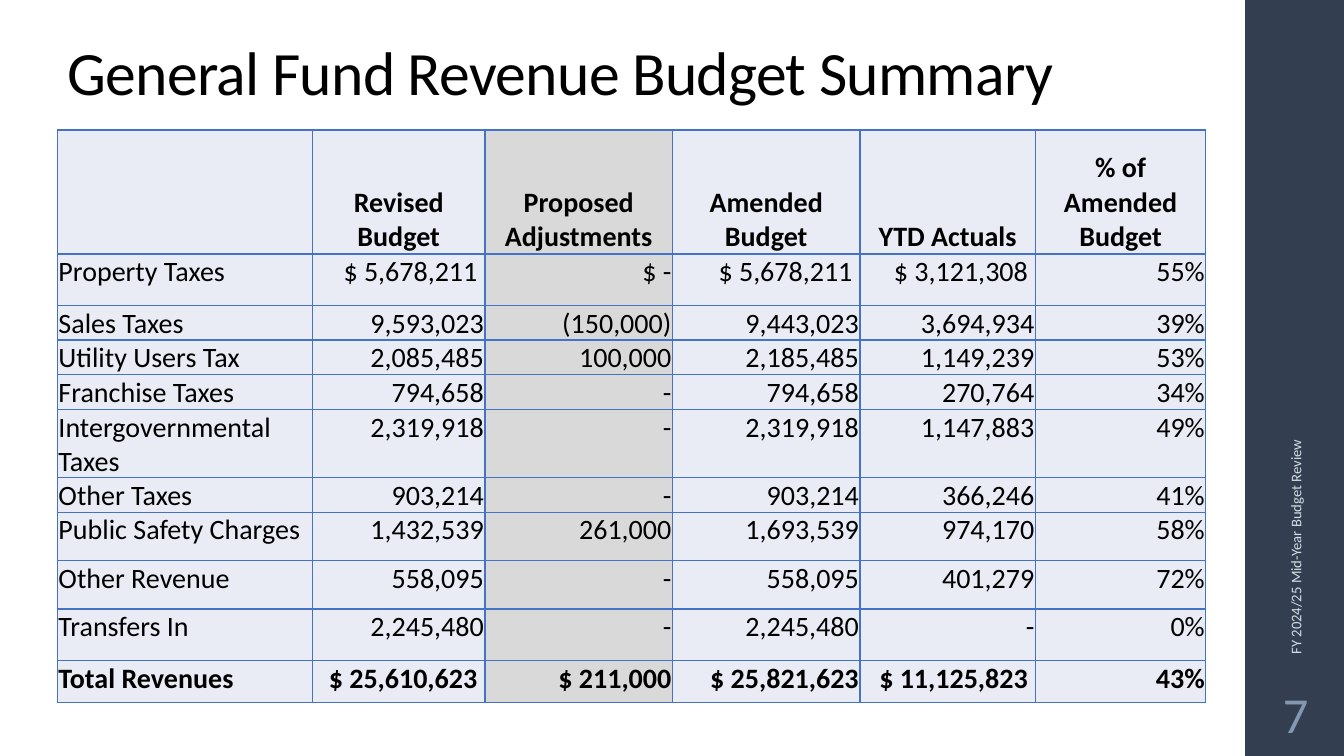
from lxml.etree import SubElement
from pptx import Presentation
from pptx.dml.color import RGBColor
from pptx.enum.shapes import MSO_SHAPE
from pptx.enum.text import MSO_ANCHOR, PP_ALIGN
from pptx.oxml import parse_xml
from pptx.oxml.ns import nsdecls, qn
from pptx.util import Inches, Pt

BLACK = RGBColor(0x00, 0x00, 0x00)
NAVY = RGBColor(0x33, 0x3F, 0x50)
PALE_GREY = RGBColor(0xD6, 0xDC, 0xE5)
SLATE = RGBColor(0x84, 0x97, 0xB0)
CELL_BLUE = RGBColor(0xE9, 0xEB, 0xF5)
CELL_GREY = RGBColor(0xD9, 0xD9, 0xD9)
BORDER_BLUE = RGBColor(0x44, 0x72, 0xC4)

COLUMN_WIDTHS = [2.53, 1.71, 1.86, 1.86, 1.74, 1.69]
ROW_HEIGHTS = [1.23, 0.51, 0.26, 0.26, 0.32, 0.51, 0.32, 0.48, 0.48, 0.51, 0.42]
ADJUSTMENTS_COLUMN = 2
REVENUES = [
    ["", "Revised Budget", "Proposed Adjustments", "Amended Budget",
     "YTD Actuals", "% of Amended Budget"],
    ["Property Taxes", "$ 5,678,211 ", "$ -", "$ 5,678,211 ", "$ 3,121,308 ", "55%"],
    ["Sales Taxes", "9,593,023", "(150,000)", "9,443,023", "3,694,934", "39%"],
    ["Utility Users Tax", "2,085,485", "100,000", "2,185,485", "1,149,239", "53%"],
    ["Franchise Taxes", "794,658", "-", "794,658", "270,764", "34%"],
    ["Intergovernmental Taxes", "2,319,918", "-", "2,319,918", "1,147,883", "49%"],
    ["Other Taxes", "903,214", "-", "903,214", "366,246", "41%"],
    ["Public Safety Charges", "1,432,539", "261,000", "1,693,539", "974,170", "58%"],
    ["Other Revenue", "558,095", "-", "558,095", "401,279", "72%"],
    ["Transfers In", "2,245,480", "-", "2,245,480", "-", "0%"],
    ["Total Revenues", "$ 25,610,623 ", "$ 211,000", "$ 25,821,623",
     "$ 11,125,823 ", "43%"],
]


def write(frame, text, size, color, align=PP_ALIGN.LEFT, bold=False):
    """Put one formatted span in the first paragraph and return both."""
    para = frame.paragraphs[0]
    para.alignment = align
    span = para.add_run()
    span.text = text
    for name, value in {"name": "Calibri", "size": Pt(size), "bold": bold}.items():
        setattr(span.font, name, value)
    span.font.color.rgb = color
    return para, span


def add_text(page, place, anchor, *text_format):
    box = page.shapes.add_textbox(*map(Inches, place))
    box.text_frame.word_wrap = True
    box.text_frame.vertical_anchor = anchor
    return box, *write(box.text_frame, *text_format)


deck = Presentation()
deck.slide_width, deck.slide_height = Inches(13.33), Inches(7.5)
page = deck.slides.add_slide(deck.slide_layouts[6])

# Side band
band = page.shapes.add_shape(
    MSO_SHAPE.RECTANGLE, Inches(12.35), 0, Inches(0.98), Inches(7.5))
band.shadow.inherit = False
band.fill.solid()
band.fill.fore_color.rgb = NAVY
band.line.fill.background()

# Title and labels on the band
title, para, span = add_text(
    page, (0.57, 0.35, 10.6, 0.78), MSO_ANCHOR.BOTTOM,
    "General Fund Revenue Budget Summary", 44, BLACK)
para.line_spacing = 0.9
span._r.get_or_add_rPr().set("spc", "-50")

footer, para, span = add_text(
    page, (10.89, 4.43, 3.92, 0.4), MSO_ANCHOR.MIDDLE,
    "FY 2024/25 Mid-Year Budget Review", 10.5, PALE_GREY)
footer.rotation = 270

number, para, span = add_text(
    page, (12.35, 6.75, 1, 0.65), MSO_ANCHOR.MIDDLE,
    "7", 36, SLATE, PP_ALIGN.CENTER)
for side in ("left", "top", "right", "bottom"):
    setattr(number.text_frame, f"margin_{side}", Inches(0.05))

# Revenue table
table = page.shapes.add_table(
    len(ROW_HEIGHTS), len(COLUMN_WIDTHS), Inches(0.57), Inches(1.29),
    Inches(sum(COLUMN_WIDTHS)), Inches(sum(ROW_HEIGHTS))).table
table.first_row = table.horz_banding = False
for column, width in zip(table.columns, COLUMN_WIDTHS):
    column.width = Inches(width)
for row, height in zip(table.rows, ROW_HEIGHTS):
    row.height = Inches(height)

last_row = len(REVENUES) - 1
cell_format = {"margin_left": Inches(0.01), "margin_right": Inches(0.01),
               "margin_top": Inches(0.01), "margin_bottom": 0}
for row_index, values in enumerate(REVENUES):
    header = row_index == 0
    for column_index, value in enumerate(values):
        cell = table.cell(row_index, column_index)
        for name, setting in cell_format.items():
            setattr(cell, name, setting)
        cell.vertical_anchor = MSO_ANCHOR.BOTTOM if header else MSO_ANCHOR.TOP
        cell.fill.solid()
        cell.fill.fore_color.rgb = (
            CELL_GREY if column_index == ADJUSTMENTS_COLUMN else CELL_BLUE)
        if header:
            align = PP_ALIGN.CENTER
        else:
            align = PP_ALIGN.RIGHT if column_index else PP_ALIGN.LEFT
        if value:
            write(cell.text_frame, value, 20, BLACK, align,
                  header or row_index == last_row)
        properties = cell._tc.get_or_add_tcPr()
        for position, edge in enumerate(("lnL", "lnR", "lnT", "lnB")):
            border = parse_xml(f'<a:{edge} {nsdecls("a")} w="{Pt(1)}"/>')
            paint = SubElement(border, qn("a:solidFill"))
            SubElement(paint, qn("a:srgbClr"), val=str(BORDER_BLUE))
            properties.insert(position, border)

deck.save("out.pptx")
